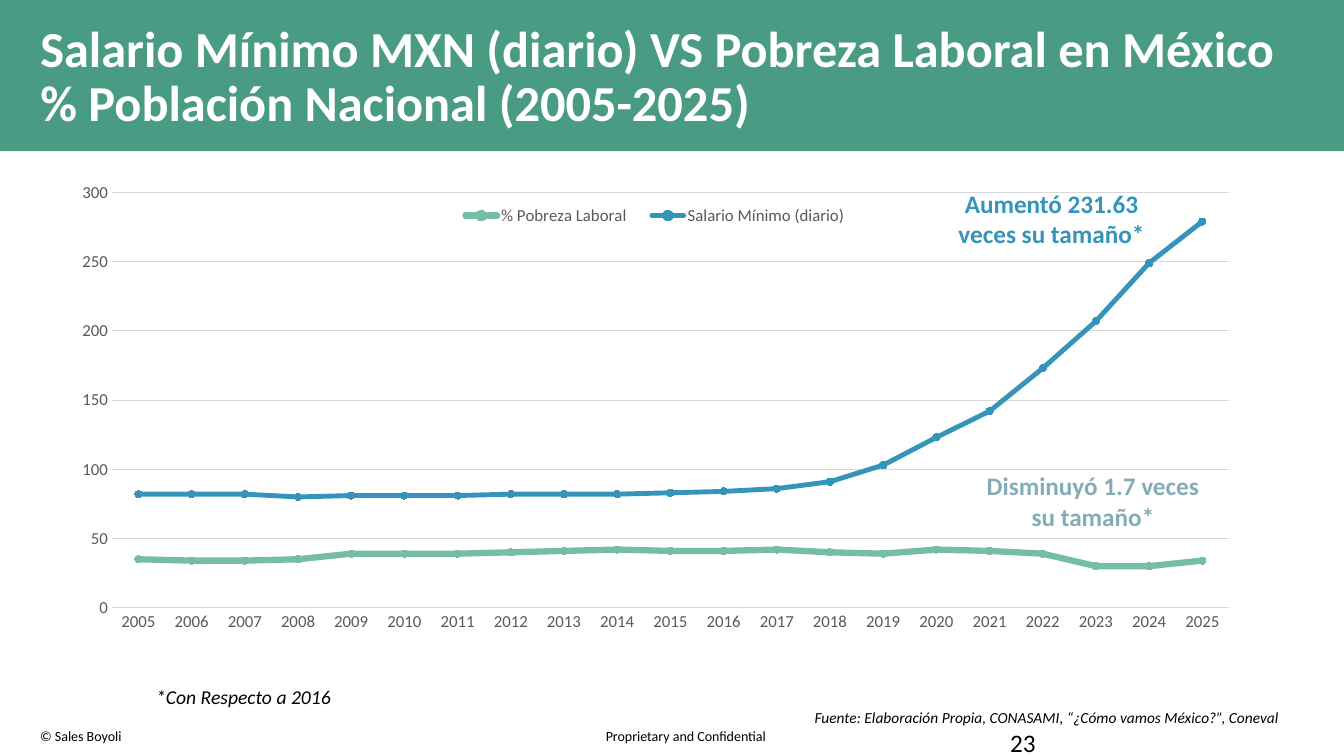
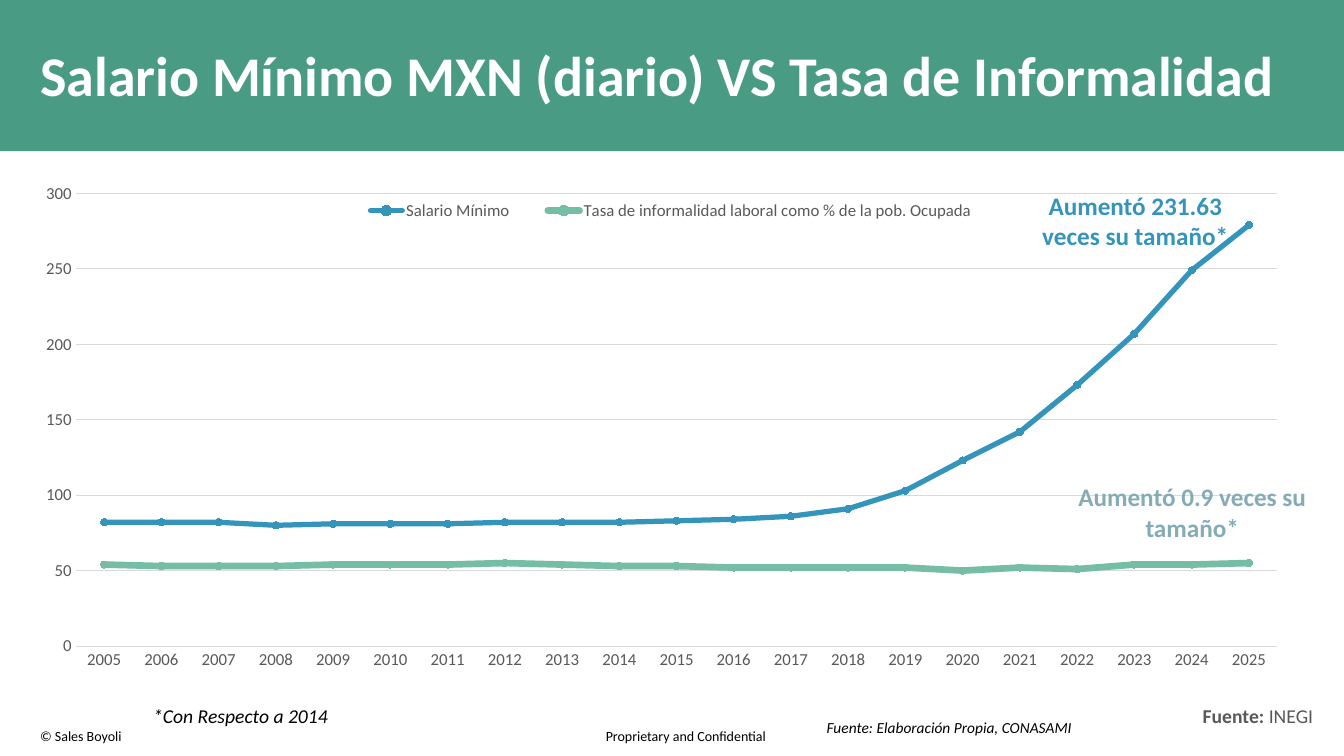
from lxml import etree
from pptx import Presentation
from pptx.chart.data import CategoryChartData
from pptx.dml.color import RGBColor
from pptx.enum.chart import XL_CHART_TYPE as CHART, XL_LEGEND_POSITION as LEGEND
from pptx.enum.chart import XL_MARKER_STYLE as MARKER, XL_TICK_MARK as TICK
from pptx.enum.shapes import MSO_SHAPE as SHAPE
from pptx.enum.text import MSO_ANCHOR as ANCHOR, MSO_AUTO_SIZE as AUTO, PP_ALIGN as ALIGN
from pptx.oxml.ns import qn
from pptx.util import Emu, Pt

SCALE = 9144
WIDTH, HEIGHT = 1333, 750
FONT = "Calibri"
BLACK, WHITE, GRAY, GRID = "000000", "FFFFFF", "595959", "D9D9D9"
BAND, BLUE, MINT, TEAL, SLATE = "4A9B83", "3494BA", "75BDA7", "58B6C0", "84ACB6"

YEARS = [str(year) for year in range(2005, 2026)]
WAGE = [82, 82, 82, 80, 81, 81, 81, 82, 82, 82, 83, 84, 86, 91, 103, 123, 142, 173, 207, 249, 279]
POVERTY = [35, 34, 34, 35, 39, 39, 39, 40, 41, 42, 41, 41, 42, 40, 39, 42, 41, 39, 30, 30, 34]
INFORMALITY = [54, 53, 53, 53, 54, 54, 54, 55, 54, 53, 53, 52, 52, 52, 52, 50, 52, 51, 54, 54, 55]


def px(*lengths):
    return [Emu(n * SCALE) for n in lengths]


def rgb(color):
    return RGBColor.from_string(color)


def style(font, size, color, bold=False, italic=False):
    font.name, font.size = FONT, Pt(size)
    font.bold, font.italic = bold, italic
    font.color.rgb = rgb(color)


def place(parent, index, box, frame):
    for old in parent.findall(qn("c:layout")):
        parent.remove(old)
    layout = etree.Element(qn("c:layout"))
    manual = etree.SubElement(layout, qn("c:manualLayout"))
    if parent.tag == qn("c:plotArea"):
        etree.SubElement(manual, qn("c:layoutTarget"), val="inner")
    for tag in ("xMode", "yMode"):
        etree.SubElement(manual, qn(f"c:{tag}"), val="edge")
    left, top, width, height = frame
    parts = ((box[0] - left) / width, (box[1] - top) / height, box[2] / width, box[3] / height)
    for tag, part in zip("xywh", parts):
        etree.SubElement(manual, qn(f"c:{tag}"), val=f"{part:.4f}")
    parent.insert(index, layout)


class Deck:
    """Holds the shared style and the slide being built."""

    def __init__(self):
        self.prs = Presentation()
        self.prs.slide_width, self.prs.slide_height = px(WIDTH, HEIGHT)

    def slide(self, title, size):
        self.s = self.prs.slides.add_slide(self.prs.slide_layouts[5])
        self.band()
        self.text((591, 717, 181, 27), "Proprietary and Confidential", 10, wrap=False)
        self.text((30, 717, 337, 27), "© Sales Boyoli", 10)
        self.title(title, size)

    def band(self):
        sp = self.s.shapes.add_shape(SHAPE.RECTANGLE, *px(0, 0, WIDTH, 150))
        sp.shadow.inherit = False
        sp.fill.solid()
        sp.fill.fore_color.rgb = rgb(BAND)
        sp.line.fill.background()
        self.s.shapes.title.element.addprevious(sp.element)

    def title(self, text, size):
        sp = self.s.shapes.title
        sp.left, sp.top, sp.width, sp.height = px(30, 14, 1272, 127)
        tf = sp.text_frame
        tf.text = text
        tf.word_wrap, tf.auto_size = True, AUTO.NONE
        tf.vertical_anchor = ANCHOR.MIDDLE
        p = tf.paragraphs[0]
        p.alignment, p.line_spacing = ALIGN.LEFT, 0.9
        style(p.runs[0].font, size, WHITE, bold=True)

    def text(self, box, text, size, color=BLACK, bold=False, italic=False,
             align=ALIGN.LEFT, wrap=True):
        tf = self.s.shapes.add_textbox(*px(*box)).text_frame
        tf.text = text
        tf.word_wrap, tf.auto_size = wrap, AUTO.SHAPE_TO_FIT_TEXT
        p = tf.paragraphs[0]
        p.alignment = align
        style(p.runs[0].font, size, color, bold, italic)
        return p

    def callout(self, box, text, color):
        self.text(box, text, 18, color, bold=True, align=ALIGN.CENTER)

    def note(self, box, text, size):
        self.text(box, text, size, italic=True)

    def line_chart(self, frame, plot, legend, series):
        data = CategoryChartData()
        data.categories = YEARS
        for name, values, *_ in series:
            data.add_series(name, values)
        chart = self.s.shapes.add_chart(CHART.LINE_MARKERS, *px(*frame), data).chart
        chart.has_title = False
        style(chart.font, 10, BLACK)
        for line, (_, _, color, marker, width) in zip(chart.plots[0].series, series):
            line.smooth = False
            line.format.line.width = Pt(width)
            line.format.line.color.rgb = rgb(color)
            line.format.line._ln.set("cap", "rnd")
            line.marker.style, line.marker.size = MARKER.CIRCLE, 5
            line.marker.format.fill.solid()
            line.marker.format.fill.fore_color.rgb = rgb(marker)
            line.marker.format.line.color.rgb = rgb(marker)
        self.axes(chart)
        chart.has_legend = True
        chart.legend.position = LEGEND.BOTTOM
        chart.legend.include_in_layout = False
        style(chart.legend.font, 12, GRAY)
        area = chart.element.find(".//" + qn("c:plotArea"))
        place(area, 0, plot, frame)
        place(chart.element.find(".//" + qn("c:legend")), 1, legend, frame)
        return chart

    def axes(self, chart):
        years, values = chart.category_axis, chart.value_axis
        for axis in (years, values):
            axis.major_tick_mark = axis.minor_tick_mark = TICK.NONE
            style(axis.tick_labels.font, 12, GRAY)
        values.minimum_scale, values.maximum_scale, values.major_unit = 0, 300, 50
        values.format.line.fill.background()
        values.has_major_gridlines = True
        for line in (years.format.line, values.major_gridlines.format.line):
            line.width = Pt(0.75)
            line.color.rgb = rgb(GRID)

    def list_last_first(self, chart):
        first, last = chart.element.findall(".//" + qn("c:ser"))
        first.addprevious(last)


def poverty_slide(deck):
    deck.slide("Salario Mínimo MXN (diario) VS Pobreza Laboral en México "
               "% Población Nacional (2005-2025)", 36)
    deck.text((992, 717, 311, 25), "23", 18)
    chart = deck.line_chart(
        (58, 171, 1185, 500), (111, 191, 1108, 412), (442, 198, 415, 32), [
            ("Salario Mínimo (diario)", WAGE, BLUE, BLUE, 3.5),
            ("% Pobreza Laboral", POVERTY, MINT, TEAL, 4.5)])
    deck.list_last_first(chart)
    deck.callout((921, 182, 244, 71), "Aumentó 231.63 veces su tamaño*", BLUE)
    deck.callout((962, 462, 244, 71), "Disminuyó 1.7 veces su tamaño*", SLATE)
    deck.note((145, 675, 293, 34), "*Con Respecto a 2016", 14)
    deck.note((798, 698, 491, 29),
              "Fuente: Elaboración Propia, CONASAMI, “¿Cómo vamos México?”, Coneval", 11)


def informality_slide(deck):
    deck.slide("Salario Mínimo MXN (diario) VS Tasa de Informalidad", 40)
    p = deck.text((1183, 693, 130, 57), "Fuente: ", 14, GRAY, bold=True, wrap=False)
    r = p.add_run()
    r.text = "INEGI"
    style(r.font, 14, GRAY)
    deck.line_chart((21, 171, 1272, 539), (75, 192, 1192, 449), (335, 193, 661, 32), [
        ("Salario Mínimo", WAGE, BLUE, BLUE, 3.75),
        ("Tasa de informalidad laboral como % de la pob. Ocupada",
         INFORMALITY, MINT, TEAL, 4.75)])
    deck.callout((1052, 473, 261, 71), "Aumentó 0.9 veces su tamaño*", SLATE)
    deck.callout((1005, 184, 242, 71), "Aumentó 231.63 veces su tamaño*", BLUE)
    deck.note((142, 693, 221, 34), "*Con Respecto a 2014", 14)
    deck.note((810, 707, 472, 29), "Fuente: Elaboración Propia, CONASAMI", 11)


def main():
    deck = Deck()
    poverty_slide(deck)
    informality_slide(deck)
    deck.prs.save("out.pptx")


if __name__ == "__main__":
    main()
